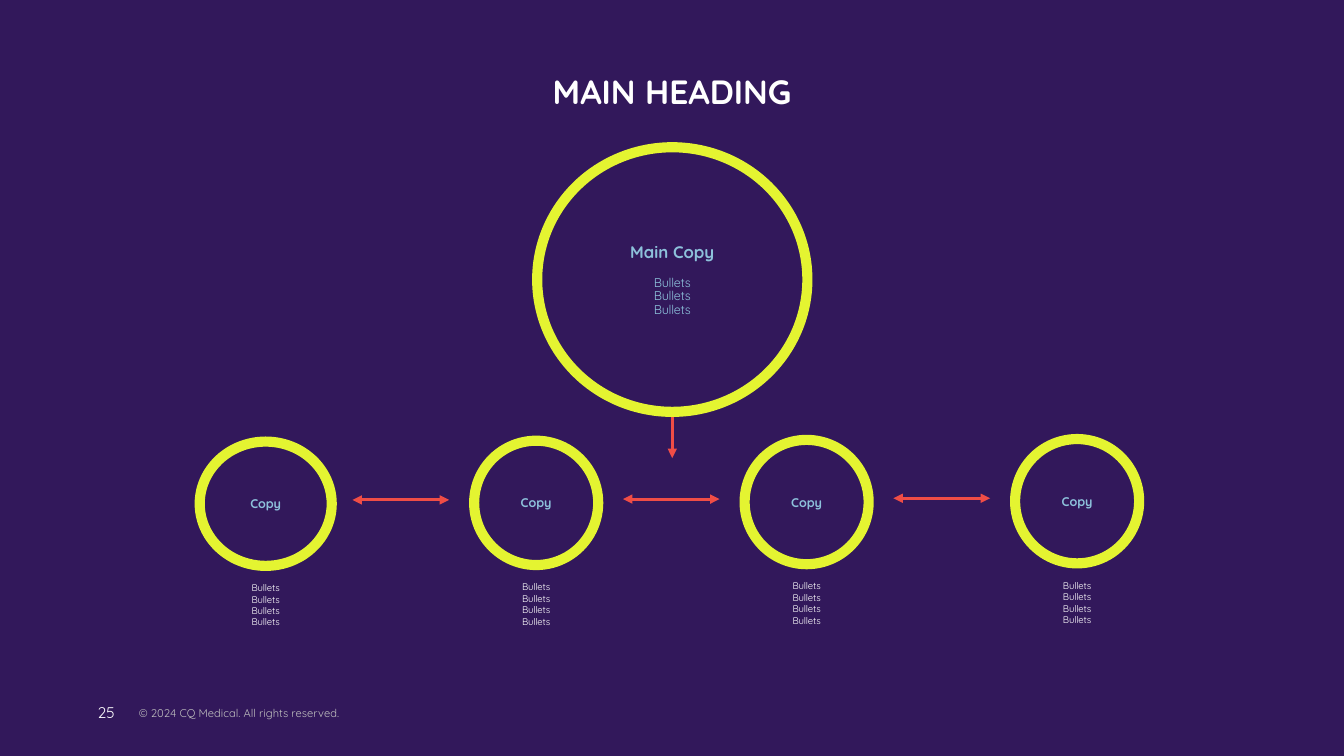
from dataclasses import dataclass

from lxml import etree
from pptx import Presentation
from pptx.dml.color import RGBColor
from pptx.enum import shapes, text
from pptx.oxml import ns
from pptx.util import Pt


@dataclass(frozen=True)
class Theme:
    font: str = "Quicksand"
    background: str = "32185B"
    ring: str = "E4F431"
    arrow: str = "F04D46"
    copy: str = "8DC1DB"
    white: str = "FFFFFF"
    muted: str = "BFBFBF"
    heading_size: float = 24
    main_size: float = 12
    number_size: float = 11
    copy_size: float = 9
    footer_size: float = 8
    bullet_size: float = 6.8
    ring_width: float = 7.25
    arrow_width: float = 2.25


THEME = Theme()
CENTER = text.PP_ALIGN.CENTER


def color(value):
    return RGBColor.from_string(value)


def write(paragraph, wording, size, ink, bold=False, align=None, tracking=0):
    paragraph.alignment = align
    run = paragraph.add_run()
    run.text = wording
    run.font.name = THEME.font
    run.font.size = Pt(size)
    run.font.bold = bold
    run.font.color.rgb = color(ink)
    if tracking:
        run.font._element.set("spc", str(round(tracking * 100)))


def text_frame(slide, left, top, width, height):
    frame = slide.shapes.add_textbox(Pt(left), Pt(top), Pt(width), Pt(height)).text_frame
    frame.word_wrap = True
    return frame


def ring(slide, left, top, width, height):
    circle = slide.shapes.add_shape(
        shapes.MSO_SHAPE.OVAL, Pt(left), Pt(top), Pt(width), Pt(height))
    circle.shadow.inherit = False
    circle.fill.background()
    circle.line.color.rgb = color(THEME.ring)
    circle.line.width = Pt(THEME.ring_width)
    frame = circle.text_frame
    frame.margin_left = frame.margin_right = frame.margin_top = frame.margin_bottom = 0
    frame.vertical_anchor = text.MSO_ANCHOR.MIDDLE
    return frame


def arrow(slide, x1, y1, x2, y2, ends):
    link = slide.shapes.add_connector(
        shapes.MSO_CONNECTOR.STRAIGHT, Pt(x1), Pt(y1), Pt(x2), Pt(y2))
    link.line.color.rgb = color(THEME.arrow)
    link.line.width = Pt(THEME.arrow_width)
    outline = link.line._get_or_add_ln()
    for end in ends:
        etree.SubElement(outline, ns.qn(f"a:{end}"), type="triangle")
    etree.SubElement(link._element.spPr, ns.qn("a:effectLst"))


def heading(slide, left, top, width, height):
    title = slide.shapes.title
    title.left, title.top, title.width, title.height = map(Pt, (left, top, width, height))
    frame = title.text_frame
    frame.auto_size = text.MSO_AUTO_SIZE.NONE
    frame.vertical_anchor = text.MSO_ANCHOR.TOP
    paragraph = frame.paragraphs[0]
    paragraph.line_spacing = 0.9
    write(paragraph, "MAIN HEADING", THEME.heading_size, THEME.white, True, CENTER)


def main_circle(slide, left, top, width, height):
    # Arrow down to the row, then the large ring over its start
    middle, bottom = left + width / 2, top + height
    arrow(slide, middle, bottom, middle, bottom + 33, ["tailEnd"])
    frame = ring(slide, left, top, width, height)
    write(frame.paragraphs[0], "Main Copy", THEME.main_size, THEME.copy, True, CENTER)
    for index in range(3):
        bullet = frame.add_paragraph()
        bullet.line_spacing = 0.9
        bullet.space_before = Pt(0 if index else 10)
        write(bullet, "Bullets", THEME.copy_size, THEME.copy, align=CENTER, tracking=-0.2)


def copy_column(slide, center_x, center_y, width, height):
    # Ring with its label
    frame = ring(slide, center_x - width / 2, center_y - height / 2, width, height)
    write(frame.paragraphs[0], "Copy", THEME.copy_size, THEME.copy, True, CENTER)

    # Lines below the ring
    bullets = text_frame(slide, center_x - 86, center_y + 52.5, 172, 40.3)
    bullets.margin_left = bullets.margin_right = Pt(2)
    bullets.auto_size = text.MSO_AUTO_SIZE.SHAPE_TO_FIT_TEXT
    for index in range(4):
        bullet = bullets.add_paragraph() if index else bullets.paragraphs[0]
        write(bullet, "Bullets", THEME.bullet_size, THEME.white,
              align=CENTER, tracking=-0.1)


def copy_row(slide, left, middle, pitch, rise):
    # Columns climb slightly from left to right
    ring_widths = [94.3, 88.6, 88.6, 88.6]
    for index, width in enumerate(ring_widths):
        center_x, center_y = left + index * pitch, middle - index * rise
        copy_column(slide, center_x, center_y, width, 88.8)
        if index < len(ring_widths) - 1:
            start, level = center_x + 62, center_y - 2.7
            arrow(slide, start, level, start + 69, level, ["headEnd", "tailEnd"])


def footer(slide, left, top):
    number = text_frame(slide, left, top, 48, 29)
    write(number.paragraphs[0], "25", THEME.number_size, THEME.white)
    notice = text_frame(slide, left + 29.5, top + 2, 639, 41)
    write(notice.paragraphs[0], "© 2024 CQ Medical. All rights reserved.",
          THEME.footer_size, THEME.muted)


def main():
    deck = Presentation()
    deck.slide_width, deck.slide_height = Pt(960), Pt(540)
    slide = deck.slides.add_slide(deck.slide_layouts.get_by_name("Title Only"))
    slide.background.fill.solid()
    slide.background.fill.fore_color.rgb = color(THEME.background)

    heading(slide, 0, 50.4, 960, 120)
    main_circle(slide, 383.7, 105.2, 193, 189)
    copy_row(slide, left=189.8, middle=359.8, pitch=193.2, rise=0.6)
    footer(slide, 62.6, 499)
    deck.save("out.pptx")


if __name__ == "__main__":
    main()
